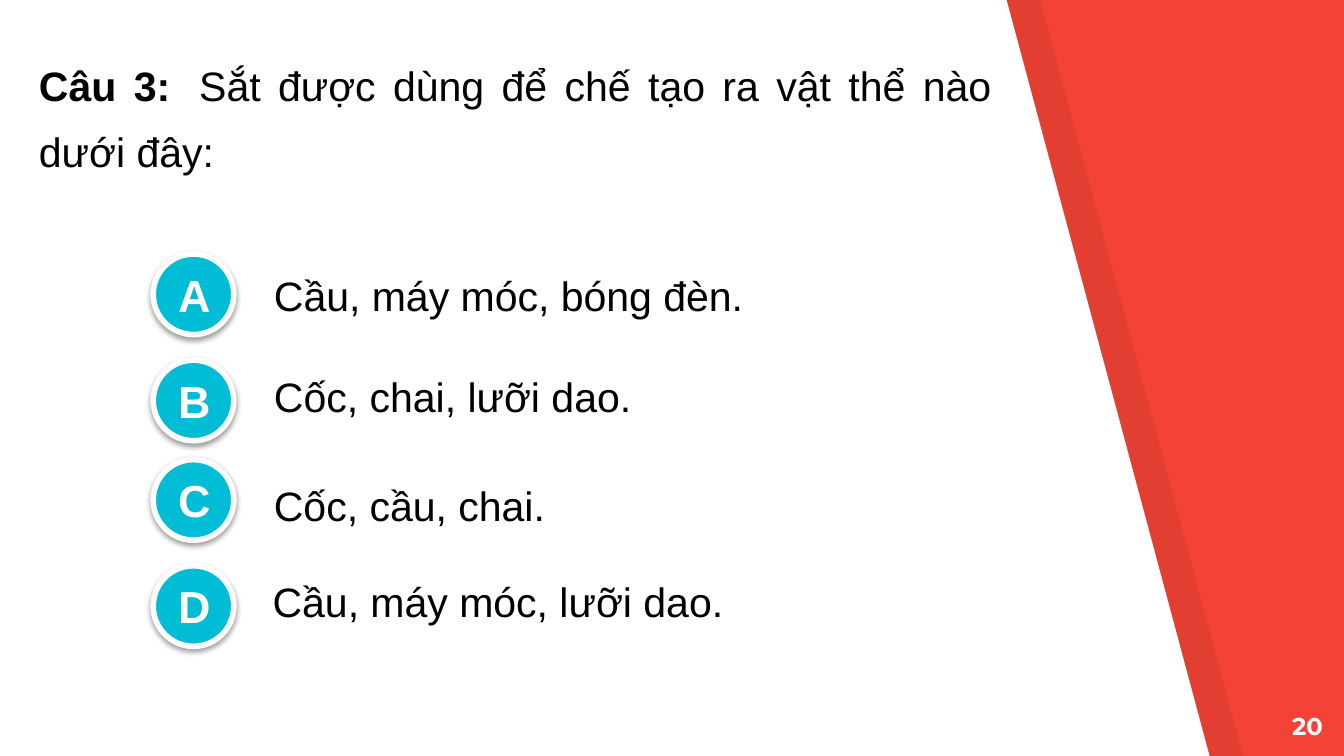
from lxml import etree
from pptx import Presentation
from pptx.dml.color import RGBColor
from pptx.enum.shapes import MSO_SHAPE as Shape
from pptx.enum.text import MSO_ANCHOR as Anchor, MSO_AUTO_SIZE as AutoSize, PP_ALIGN as Align
from pptx.oxml import parse_xml
from pptx.oxml.ns import nsdecls, qn
from pptx.util import Inches, Pt

WIDTH = 10
HEIGHT = WIDTH * 9 / 16
RED = RGBColor(0xF4, 0x43, 0x36)
CYAN = RGBColor(0x00, 0xBC, 0xD4)
WHITE = RGBColor(0xFF, 0xFF, 0xFF)
BLACK = RGBColor(0x00, 0x00, 0x00)

HARD_SPACE = chr(160)
LABEL = "Câu 3: "
QUESTION = HARD_SPACE + "Sắt được dùng để chế tạo ra vật thể nào dưới đây:"
PAGE_NUMBER = "20"
ANSWERS = [
    ("A", 1.89, "Cầu, máy móc, bóng đèn.", (1.94, 1.8, 4.52, 0.67), 1.35),
    ("B", 2.68, "Cốc, chai, lưỡi dao.", (1.94, 2.68, 5.95, 0.53), 1),
    ("C", 3.42, "Cốc, cầu, chai.", (1.94, 3.43, 3.33, 0.53), 1.35),
    ("D", 4.21, "Cầu, máy móc, lưỡi dao.", (1.93, 4.21, 7.22, 0.53), 1),
]
PANELS = [(0, WHITE, 100), (0.25, BLACK, 7)]
PANEL_TOP, PANEL_BOTTOM = 7.49, 9
BADGE_LEFT, BADGE_SIZE = 1.14, 0.6


def style(span, size, color, bold=False, font="Arial"):
    span.font.name = font
    span.font.size = Pt(size)
    span.font.bold = bold
    span.font.color.rgb = color


def write(box, text, size, color, align, bold=False, font="Arial", spacing=1):
    frame = box.text_frame
    frame.word_wrap = True
    frame.margin_left = frame.margin_right = Inches(0.1)
    frame.margin_top = frame.margin_bottom = Inches(0.1)
    para = frame.paragraphs[0]
    para.text = text
    para.alignment = align
    para.line_spacing = spacing
    style(para.runs[0], size, color, bold, font)


def add_panel(page, left, color, opacity):
    corners = [(left, HEIGHT), (left + PANEL_BOTTOM, HEIGHT), (left + PANEL_TOP, 0)]
    builder = page.shapes.build_freeform(Inches(left), 0)
    builder.add_line_segments([(Inches(x), Inches(y)) for x, y in corners], close=True)
    panel = builder.convert_to_shape()
    panel.shadow.inherit = False
    panel.line.fill.background()
    panel.fill.solid()
    panel.fill.fore_color.rgb = color
    if opacity < 100:
        tint = panel._element.spPr.find(".//" + qn("a:srgbClr"))
        etree.SubElement(tint, qn("a:alpha"), val=str(opacity * 1000))
    page.shapes._spTree.insert(2, panel._element)


def add_badge(page, letter, top):
    badge = page.shapes.add_shape(
        Shape.OVAL, *map(Inches, (BADGE_LEFT, top, BADGE_SIZE, BADGE_SIZE)))
    badge.fill.solid()
    badge.fill.fore_color.rgb = CYAN
    badge.line.color.rgb = WHITE
    badge.line.width = Pt(3)
    badge._element.spPr.append(parse_xml(
        f'<a:effectLst {nsdecls("a")}><a:outerShdw blurRad="{Pt(3.1)}" dist="{Pt(1.6)}" '
        'dir="5400000" algn="ctr" rotWithShape="0"><a:srgbClr val="000000">'
        '<a:alpha val="38000"/></a:srgbClr></a:outerShdw></a:effectLst>'))
    badge.text_frame.vertical_anchor = Anchor.MIDDLE
    write(badge, letter, 24, WHITE, Align.LEFT, bold=True)


def add_question(page):
    title = page.shapes.title
    title.left, title.top, title.width, title.height = map(Inches, (0.19, 0.27, 7.29, 1.1))
    frame = title.text_frame
    frame.vertical_anchor = Anchor.TOP
    frame.auto_size = AutoSize.SHAPE_TO_FIT_TEXT
    para = frame.paragraphs[0]
    para.alignment = Align.JUSTIFY
    para.line_spacing = 1.35
    for text, bold in ((LABEL, True), (QUESTION, False)):
        span = para.add_run()
        span.text = text
        style(span, 22, BLACK, bold)


def main():
    deck = Presentation()
    deck.slide_width, deck.slide_height = Inches(WIDTH), Inches(HEIGHT)
    page = deck.slides.add_slide(deck.slide_layouts[5])
    page.background.fill.solid()
    page.background.fill.fore_color.rgb = RED
    for panel in PANELS:
        add_panel(page, *panel)
    add_question(page)
    for letter, top, answer, place, spacing in ANSWERS:
        add_badge(page, letter, top)
        box = page.shapes.add_textbox(*map(Inches, place))
        box.text_frame.vertical_anchor = Anchor.MIDDLE
        align = Align.JUSTIFY if spacing > 1 else Align.LEFT
        write(box, answer, 22, BLACK, align, spacing=spacing)
    number = page.shapes.add_textbox(*map(Inches, (9.34, 5.19, 0.6, 0.43)))
    write(number, PAGE_NUMBER, 13, WHITE, Align.RIGHT, bold=True, font="Montserrat")
    deck.save("out.pptx")


if __name__ == "__main__":
    main()
